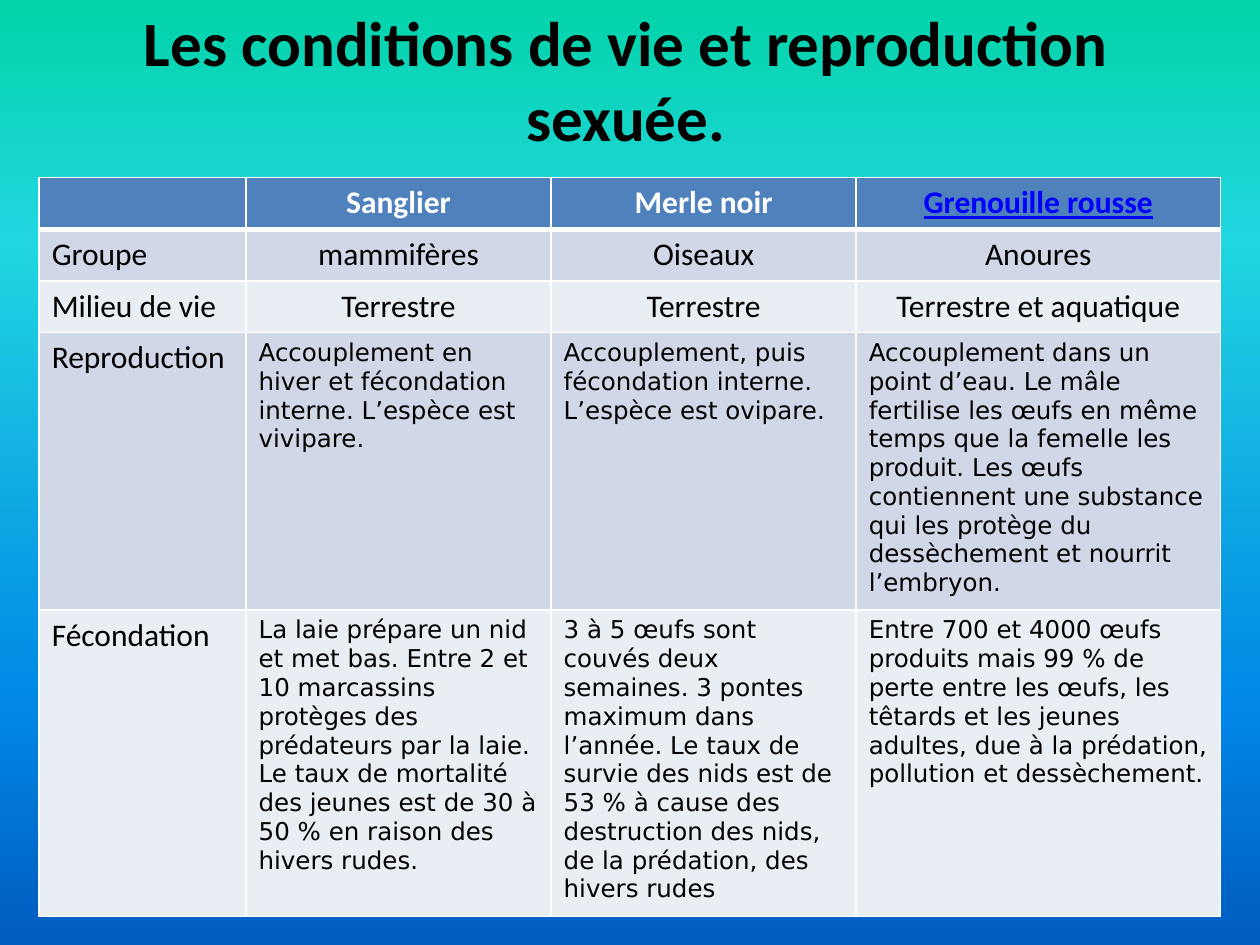
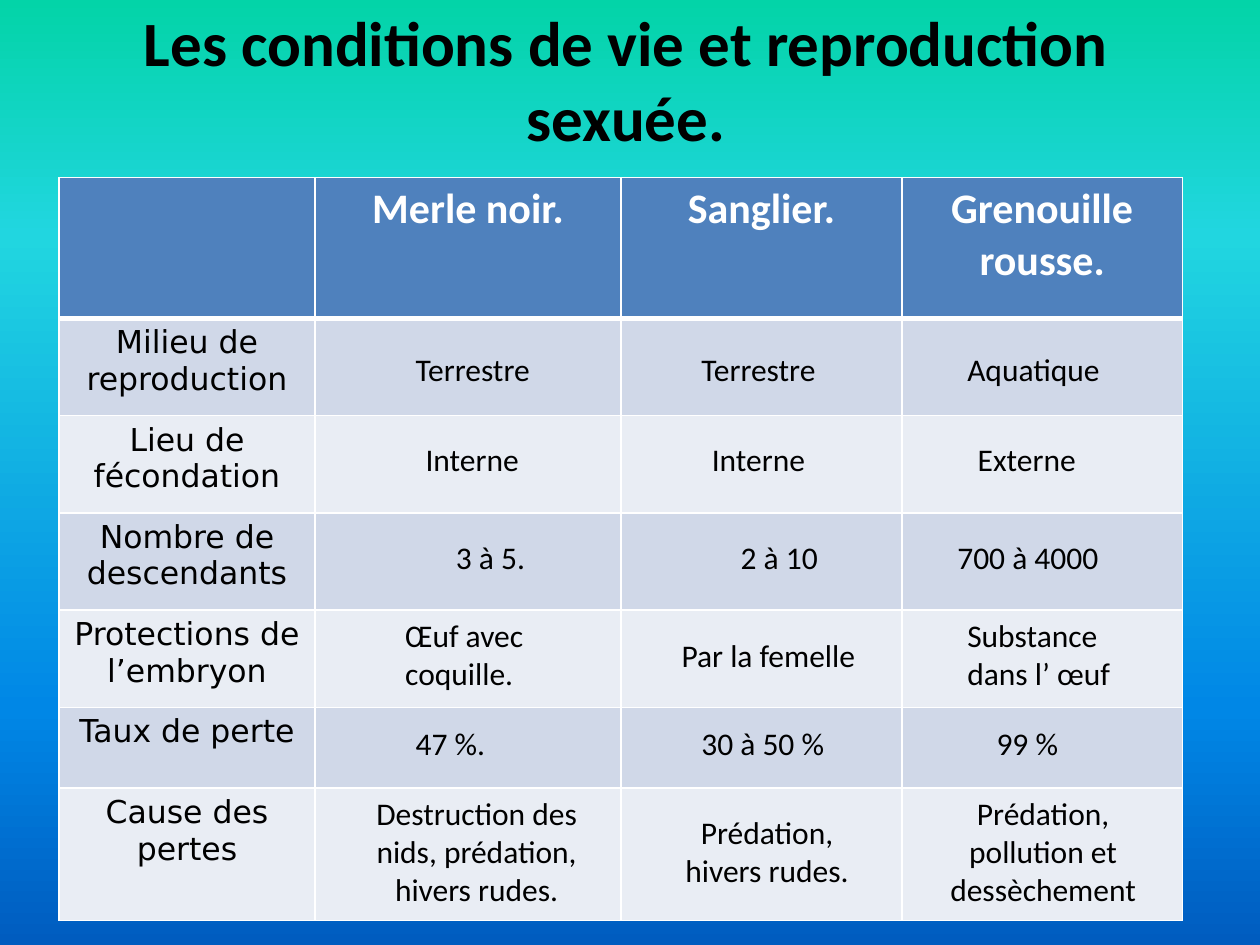
from lxml.etree import SubElement
from pptx import Presentation
from pptx.dml.color import RGBColor
from pptx.enum.text import MSO_ANCHOR, PP_ALIGN
from pptx.oxml.ns import qn
from pptx.util import Cm, Pt

COLORS = {
    "text": "000000", "header": "4F81BD", "header_text": "FFFFFF", "border": "FFFFFF",
    "band_dark": "D0D8E8", "band_light": "E9EDF4", "accent": "0000FF",
}
BACKDROP = {0: "03D4A8", 25: "21D6E0", 75: "0087E6", 100: "005CBF"}
TITLE = "Les conditions de vie et reproduction sexuée."
TITLE_BOX = (1.19, 0, 22.86, 3.18)
TABLE_TOP = 3.58
BODY_FONT, LONG_FONT = "Calibri", "DejaVu Sans"
LINE_HEIGHT, BOX_PADDING = 0.775, 0.25
LEFT, CENTER = PP_ALIGN.LEFT, PP_ALIGN.CENTER

SPECIES = ["", "Sanglier", "Merle noir", "Grenouille rousse"]
SHORT_ROWS = [
    ["Groupe", "mammifères", "Oiseaux", "Anoures"],
    ["Milieu de vie", "Terrestre", "Terrestre", "Terrestre et aquatique"],
]
LONG_ROWS = [
    ["Reproduction",
     "Accouplement en hiver et fécondation interne. L’espèce est vivipare.",
     "Accouplement, puis fécondation interne. L’espèce est ovipare.",
     "Accouplement dans un point d’eau. Le mâle fertilise les œufs en même temps que la "
     "femelle les produit. Les œufs contiennent une substance qui les protège du "
     "dessèchement et nourrit l’embryon."],
    ["Fécondation",
     "La laie prépare un nid et met bas. Entre 2 et 10 marcassins protèges des prédateurs "
     "par la laie. Le taux de mortalité des jeunes est de 30 à 50 % en raison des hivers rudes.",
     "3 à 5 œufs sont couvés deux semaines. 3 pontes maximum dans l’année. Le taux de survie "
     "des nids est de 53 % à cause des destruction des nids, de la prédation, des hivers rudes",
     "Entre 700 et 4000 œufs produits mais 99 % de perte entre les œufs, les têtards et les "
     "jeunes adultes, due à la prédation, pollution et dessèchement."],
]
COMPARED = ["", "Merle noir.", "Sanglier.", "Grenouille rousse."]
CRITERIA = ["Milieu de reproduction", "Lieu de fécondation", "Nombre de descendants",
            "Protections de l’embryon", "Taux de perte", "Cause des pertes"]
# Each answer row: centre height, alignment, then (text, lines, left, width) per species.
ANSWERS = [
    (3.86, LEFT, [("Terrestre", 1, 6.94, 3.76), ("Terrestre", 1, 12.7, 3.18),
                  ("Aquatique", 1, 18.06, 3.76)]),
    (5.67, LEFT, [("Interne", 1, 7.14, 3.38), ("Interne", 1, 12.91, 2.97),
                  ("Externe", 1, 18.27, 2.97)]),
    (7.65, LEFT, [("3 à 5.", 1, 7.75, 2.59), ("2 à 10", 1, 13.49, 2.18),
                  ("700 à 4000", 1, 17.86, 3.96)]),
    (9.62, LEFT, [("Œuf avec coquille.", 2, 6.73, 3.76), ("Par la femelle", 1, 12.3, 4.37),
                  ("Substance dans l’ œuf", 2, 18.06, 3.96)]),
    (11.41, LEFT, [("47 %.", 1, 6.94, 3.38), ("30 à 50 %", 1, 12.7, 3.18),
                   ("99 %", 1, 18.65, 1.98)]),
    (13.59, CENTER, [("Destruction des nids, prédation, hivers rudes.", 3, 5.74, 5.36),
                     ("Prédation, hivers rudes.", 2, 12.09, 4.37),
                     ("Prédation, pollution et dessèchement", 3, 17.45, 4.78)]),
]


def write(frame, text, size=18, font=BODY_FONT, color="text", bold=False, align=LEFT,
          underline=False):
    """Write one styled run into the first paragraph of a text frame."""
    paragraph = frame.paragraphs[0]
    paragraph.alignment = align
    run = paragraph.add_run()
    run.text = text
    run.font.size = Pt(size)
    run.font.name = font
    run.font.bold = bold
    run.font.underline = underline
    run.font.color.rgb = RGBColor.from_string(COLORS[color])


def add_label(slide, box, text, anchor=MSO_ANCHOR.TOP, **style):
    """Add a wrapping text box at left, top, width, height in centimetres."""
    frame = slide.shapes.add_textbox(*map(Cm, box)).text_frame
    frame.word_wrap = True
    frame.vertical_anchor = anchor
    write(frame, text, **style)


def paint_backdrop(master):
    """Give the master the vertical four-colour gradient."""
    fill = master.background.fill
    fill.gradient()
    fill.gradient_angle = 270
    stops = next(master.background._cSld.iter(qn("a:gsLst")))
    for stop in list(stops):
        stops.remove(stop)
    for position, color in BACKDROP.items():
        stop = SubElement(stops, qn("a:gs"), pos=str(position * 1000))
        SubElement(stop, qn("a:srgbClr"), val=color)


def style_cell(cell, row):
    """Apply the white borders and the header or band fill of a row."""
    properties = cell._tc.get_or_add_tcPr()
    for side in "LRTB":
        thick = (row == 0 and side == "B") or (row == 1 and side == "T")
        line = SubElement(properties, qn(f"a:ln{side}"), w=str(Pt(3 if thick else 1)))
        SubElement(SubElement(line, qn("a:solidFill")), qn("a:srgbClr"), val=COLORS["border"])
    band = "header" if row == 0 else "band_dark" if row % 2 else "band_light"
    cell.fill.solid()
    cell.fill.fore_color.rgb = RGBColor.from_string(COLORS[band])


def add_grid(slide, left, widths, heights, rows, style_of):
    """Add a banded table, styling each text by style_of(row, column)."""
    table = slide.shapes.add_table(len(heights), len(widths), Cm(left), Cm(TABLE_TOP),
                                   Cm(sum(widths)), Cm(sum(heights))).table
    for column, width in zip(table.columns, widths):
        column.width = Cm(width)
    for r, (height, texts) in enumerate(zip(heights, rows)):
        table.rows[r].height = Cm(height)
        for c, text in enumerate(texts):
            cell = table.cell(r, c)
            style_cell(cell, r)
            if text:
                write(cell.text_frame, text, **style_of(r, c))


def add_titled_slide(deck):
    """Add a blank slide with the shared title."""
    slide = deck.slides.add_slide(deck.slide_layouts[6])
    add_label(slide, TITLE_BOX, TITLE, MSO_ANCHOR.MIDDLE, size=36, bold=True, align=CENTER)
    return slide


def species_style(row, column):
    """Return the text style of a cell in the species table."""
    if row == 0:
        linked = column == 3
        return dict(color="accent" if linked else "header_text", underline=linked,
                    bold=True, align=CENTER)
    if column == 0:
        return {}
    return dict(align=CENTER) if row <= len(SHORT_ROWS) else dict(size=14, font=LONG_FONT)


def comparison_style(row, column):
    """Return the text style of a cell in the comparison table."""
    if row == 0:
        return dict(size=24, color="header_text", bold=True, align=CENTER)
    return dict(font=LONG_FONT, align=CENTER)


def build_species(deck):
    """Build the slide that describes the three species."""
    add_grid(add_titled_slide(deck), 0.79, [4.17, 6.15, 6.15, 7.34],
             [1.04] * 3 + [5.46, 6.05], [SPECIES, *SHORT_ROWS, *LONG_ROWS], species_style)


def build_comparison(deck):
    """Build the slide whose answers lie over an empty comparison table."""
    slide = add_titled_slide(deck)
    left = TITLE_BOX[0]
    rows = [COMPARED] + [[criterion, "", "", ""] for criterion in CRITERIA]
    add_grid(slide, left, [5.16, 6.17, 5.66, 5.66], [2.84] + [1.96] * 4 + [1.63, 2.67],
             rows, comparison_style)
    for center, align, answers in ANSWERS:
        for text, lines, offset, width in answers:
            height = BOX_PADDING + LINE_HEIGHT * lines
            box = (left + offset, TABLE_TOP + center - height / 2, width, height)
            add_label(slide, box, text, align=align)


def main():
    """Build and save the deck."""
    deck = Presentation()
    deck.slide_width, deck.slide_height = Cm(25.4), Cm(19.05)
    paint_backdrop(deck.slide_master)
    build_species(deck)
    build_comparison(deck)
    deck.save("out.pptx")


if __name__ == "__main__":
    main()
